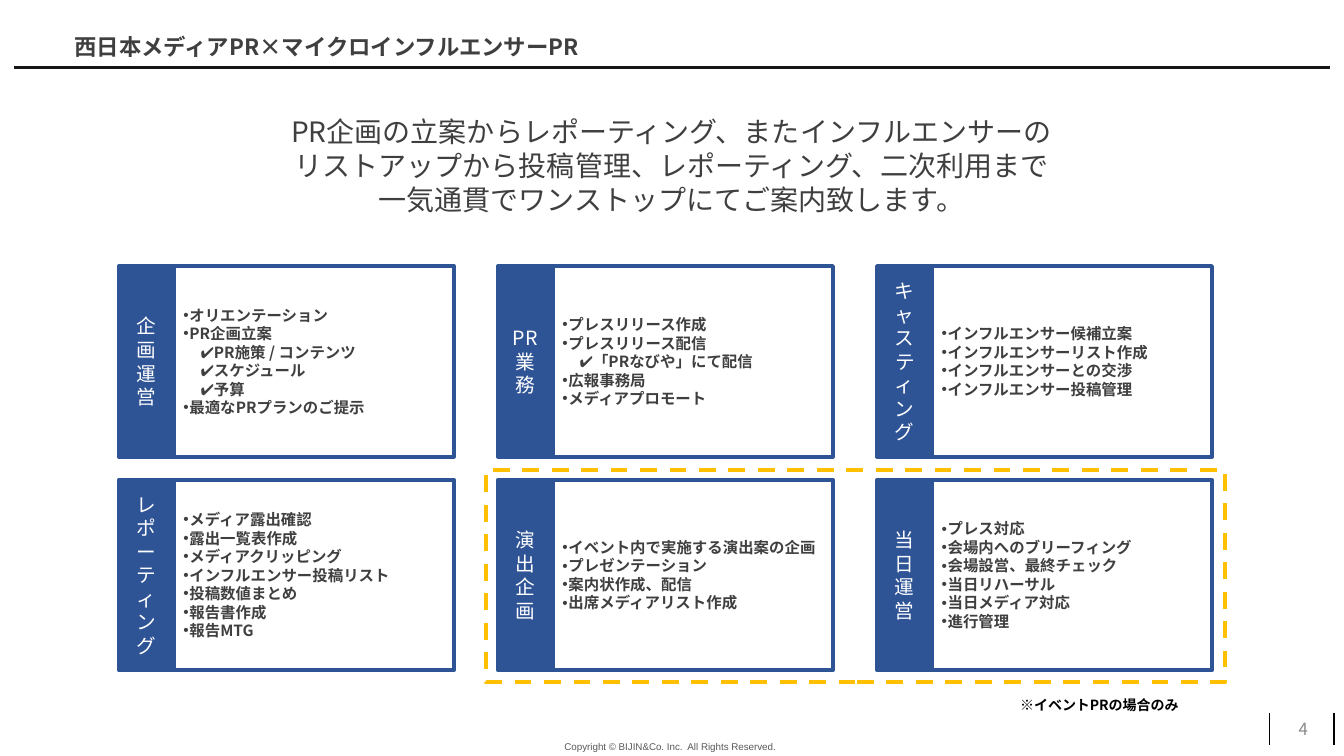
"""Build the slide on one-stop media PR and micro-influencer PR services."""
from lxml import etree
from pptx import Presentation
from pptx.dml.color import RGBColor
from pptx.enum.dml import MSO_LINE
from pptx.enum.shapes import MSO_CONNECTOR, MSO_SHAPE
from pptx.enum.text import MSO_ANCHOR, PP_ALIGN
from pptx.oxml.ns import qn
from pptx.util import Inches, Pt

RECTANGLE, STRAIGHT, DASH = MSO_SHAPE.RECTANGLE, MSO_CONNECTOR.STRAIGHT, MSO_LINE.DASH
LEFT, CENTER, RIGHT = PP_ALIGN.LEFT, PP_ALIGN.CENTER, PP_ALIGN.RIGHT
TOP, MIDDLE = MSO_ANCHOR.TOP, MSO_ANCHOR.MIDDLE

JAPANESE, LATIN = "Noto Sans CJK JP", "Arial"
BLUE, YELLOW = "2F5496", "FFC000"
WHITE, BLACK, DARK = "FFFFFF", "000000", "3F3F3F"

TITLE = "西日本メディアPR×マイクロインフルエンサーPR"
LEAD = [
    "PR企画の立案からレポーティング、またインフルエンサーの",
    "リストアップから投稿管理、レポーティング、二次利用まで",
    "一気通貫でワンストップにてご案内致します。",
]
CHECK = "✔️"
SERVICES = [
    ("企画運営", ["オリエンテーション", "PR企画立案", "✔️PR施策 / コンテンツ",
              "✔️スケジュール", "✔️予算", "最適なPRプランのご提示"]),
    ("PR業務", ["プレスリリース作成", "プレスリリース配信", "✔️「PRなびや」にて配信",
              "広報事務局", "メディアプロモート"]),
    ("キャスティング", ["インフルエンサー候補立案", "インフルエンサーリスト作成",
                 "インフルエンサーとの交渉", "インフルエンサー投稿管理"]),
    ("レポーティング", ["メディア露出確認", "露出一覧表作成", "メディアクリッピング",
                 "インフルエンサー投稿リスト", "投稿数値まとめ", "報告書作成", "報告MTG"]),
    ("演出企画", ["イベント内で実施する演出案の企画", "プレゼンテーション",
              "案内状作成、配信", "出席メディアリスト作成"]),
    ("当日運営", ["プレス対応", "会場内へのブリーフィング", "会場設営、最終チェック",
              "当日リハーサル", "当日メディア対応", "進行管理"]),
]
EVENT_NOTE = "※イベントPRの場合のみ"
COPYRIGHT = "Copyright © BIJIN&Co. Inc.  All Rights Reserved."
PAGE_NUMBER = "4"

COLUMNS = 3
GRID_LEFT, GRID_TOP = 1.18, 2.64
COLUMN_STEP, ROW_STEP = 3.76, 2.12
LABEL_WIDTH, CARD_WIDTH, CARD_HEIGHT = 0.54, 2.78, 1.89
BULLET_INDENT, CHECK_INDENT = 0.06, 0.17
RULES = [
    (13.23, 7.07, 13.23, 7.39, BLACK, 1),
    (12.59, 7.07, 12.59, 7.39, BLACK, 1),
    (0.14, 0.67, 13.19, 0.67, "171616", 2),
]
TEXTS = [
    ((5.5, 7.3, 2.33, 0.22), [COPYRIGHT], LEFT, TOP,
     {"size": Pt(7), "name": LATIN}, "595959"),
    ((10.07, 7.03, 3, 0.4), [PAGE_NUMBER], RIGHT, MIDDLE, {"size": Pt(12)}, "888888"),
    ((0.64, 0.28, 10.02, 0.37), [TITLE], LEFT, TOP, {"size": Pt(16), "bold": True}, DARK),
    ((2.27, 1.09, 8.78, 1.11), LEAD, CENTER, TOP, {"size": Pt(20)}, DARK),
    ((10.02, 6.86, 2.14, 0.27), [EVENT_NOTE], LEFT, TOP,
     {"size": Pt(10), "bold": True}, BLACK),
]


def color(target, value):
    target.rgb = RGBColor.from_string(value)


def write(shape, lines, align, anchor, font_format, text_color, bulleted=False):
    frame = shape.text_frame
    frame.word_wrap = True
    frame.vertical_anchor = anchor
    for index, line in enumerate(lines):
        paragraph = frame.paragraphs[0] if index == 0 else frame.add_paragraph()
        paragraph.alignment = align
        if bulleted:
            indent(paragraph, line.startswith(CHECK))
        run = paragraph.add_run()
        run.text = line
        for attribute, value in {"name": JAPANESE, **font_format}.items():
            setattr(run.font, attribute, value)
        color(run.font.color, text_color)
        east_asian = etree.SubElement(run.font._element, qn("a:ea"))
        east_asian.set("typeface", run.font.name)


def indent(paragraph, checked):
    properties = paragraph._p.get_or_add_pPr()
    margin, first = (CHECK_INDENT, 0) if checked else (BULLET_INDENT, -BULLET_INDENT)
    properties.set("marL", str(Inches(margin)))
    properties.set("indent", str(Inches(first)))
    if checked:
        etree.SubElement(properties, qn("a:buNone"))
    else:
        etree.SubElement(properties, qn("a:buFont")).set("typeface", LATIN)
        etree.SubElement(properties, qn("a:buChar")).set("char", "•")


def add_block(slide, place, outline, fill=None):
    block = slide.shapes.add_shape(RECTANGLE, *map(Inches, place))
    block.shadow.inherit = False
    if fill:
        block.fill.solid()
        color(block.fill.fore_color, fill)
    else:
        block.fill.background()
    color(block.line.color, outline)
    block.line.width = Pt(3)
    return block


def add_rule(slide, x1, y1, x2, y2, line_color, width):
    rule = slide.shapes.add_connector(STRAIGHT, *map(Inches, (x1, y1, x2, y2)))
    color(rule.line.color, line_color)
    rule.line.width = Pt(width)
    etree.SubElement(rule._element.spPr, qn("a:effectLst"))


def add_service(slide, position, label, tasks):
    row, column = divmod(position, COLUMNS)
    left, top = GRID_LEFT + column * COLUMN_STEP, GRID_TOP + row * ROW_STEP
    card = add_block(slide, (left + LABEL_WIDTH, top, CARD_WIDTH, CARD_HEIGHT), BLUE)
    write(card, tasks, LEFT, MIDDLE, {"size": Pt(11), "bold": True}, DARK, bulleted=True)
    tab = add_block(slide, (left, top, LABEL_WIDTH, CARD_HEIGHT), BLUE, BLUE)
    write(tab, [label], CENTER, MIDDLE, {"size": Pt(14)}, WHITE)


def main():
    deck = Presentation()
    deck.slide_width, deck.slide_height = Inches(13.33), Inches(7.5)
    slide = deck.slides.add_slide(deck.slide_layouts[6])
    for rule in RULES:
        add_rule(slide, *rule)
    for place, *content in TEXTS:
        write(slide.shapes.add_textbox(*map(Inches, place)), *content)
    for position, service in enumerate(SERVICES):
        add_service(slide, position, *service)
    event_frame = add_block(slide, (4.82, 4.66, 7.33, 2.11), YELLOW)
    event_frame.line.dash_style = DASH
    deck.save("out.pptx")


if __name__ == "__main__":
    main()
